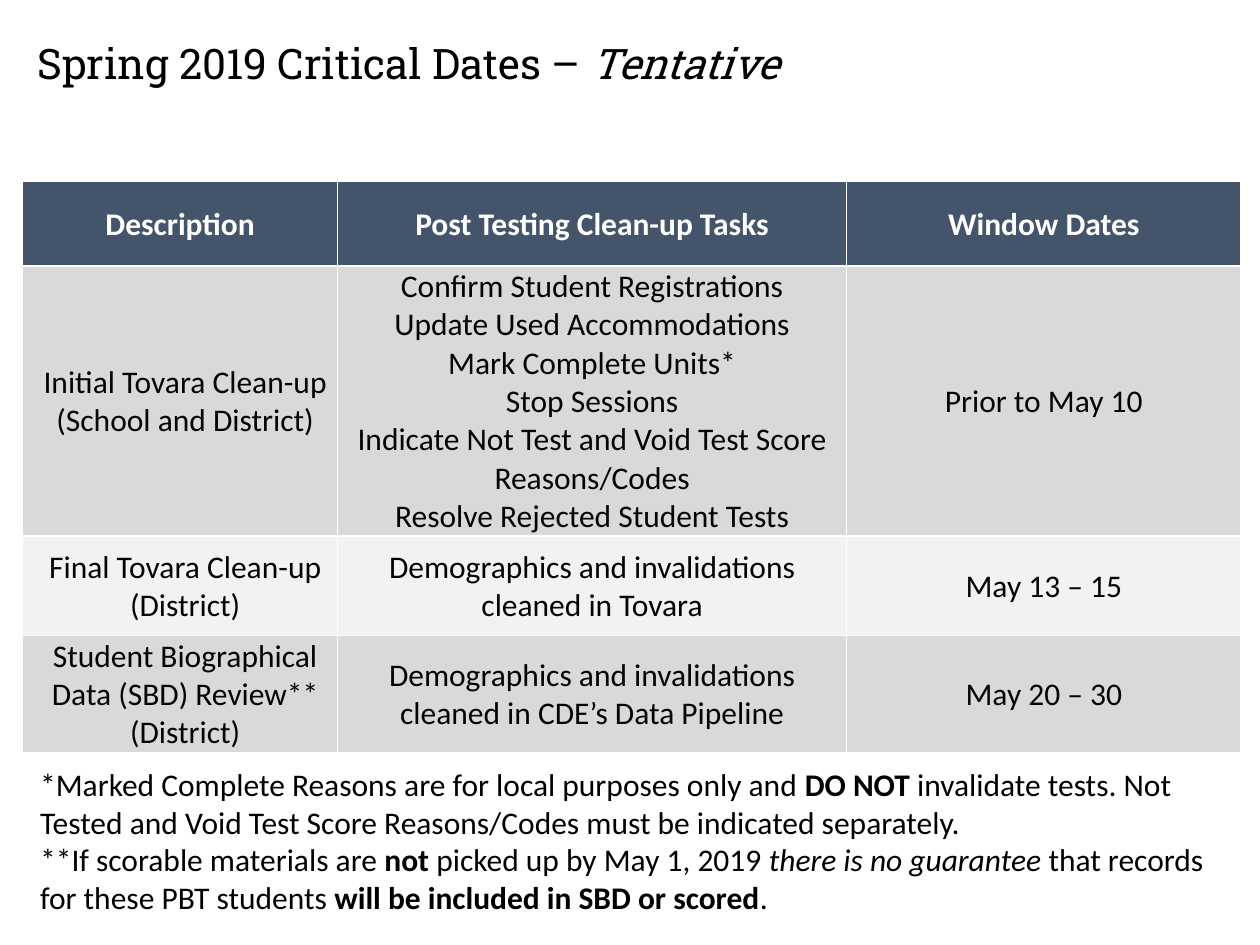
"""Build the Spring 2019 critical dates slide."""
from dataclasses import dataclass
from typing import NamedTuple

from lxml.etree import SubElement
from pptx import Presentation
from pptx.dml.color import RGBColor
from pptx.enum.text import MSO_ANCHOR, MSO_AUTO_SIZE, PP_ALIGN
from pptx.oxml.ns import qn
from pptx.util import Inches, Pt


@dataclass(frozen=True)
class Theme:
    heading_font: str = "Roboto Slab"
    body_font: str = "Calibri"
    heading_size: int = 24
    body_size: int = 18
    black: str = "000000"
    cell_text: str = "040404"
    white: str = "FFFFFF"
    header_fill: str = "44546A"
    band_fills: tuple[str, str] = ("D9D9D9", "F2F2F2")
    border_width: int = 1


class Span(NamedTuple):
    text: str
    bold: bool = False
    italic: bool = False


@dataclass(frozen=True)
class TableRow:
    description: str
    tasks: tuple[str, ...]
    window: str
    height: float = 0.79

    def columns(self) -> list[tuple[str, ...]]:
        return [(self.description,), self.tasks, (self.window,)]


THEME = Theme()
COLUMN_WIDTHS = (2.5, 4.04, 3.13)
TITLE = [Span("Spring 2019 Critical Dates – "), Span("Tentative", italic=True)]
ROWS = [
    TableRow("Description", ("Post Testing Clean-up Tasks",), "Window Dates", 0.67),
    TableRow(
        "Initial Tovara Clean-up (School and District)",
        (
            "Confirm Student Registrations",
            "Update Used Accommodations",
            "Mark Complete Units*",
            "Stop Sessions",
            "Indicate Not Test and Void Test Score Reasons/Codes",
            "Resolve Rejected Student Tests",
        ),
        "Prior to May 10",
    ),
    TableRow(
        "Final Tovara Clean-up (District)",
        ("Demographics and invalidations cleaned in Tovara",),
        "May 13 – 15",
    ),
    TableRow(
        "Student Biographical Data (SBD) Review** (District)",
        ("Demographics and invalidations cleaned in CDE’s Data Pipeline",),
        "May 20 – 30",
    ),
]
FOOTNOTES = [
    [
        Span("*Marked Complete Reasons are for local purposes only and "),
        Span("DO NOT ", bold=True),
        Span("invalidate tests. Not Tested and Void Test Score Reasons/Codes must be indicated separately."),
    ],
    [
        Span("**If scorable materials are "),
        Span("not", bold=True),
        Span(" picked up by May 1, 2019 "),
        Span("there is no guarantee ", italic=True),
        Span("that records for these PBT students "),
        Span("will be included in SBD or scored", bold=True),
        Span("."),
    ],
]


def set_values(target, values: dict) -> None:
    for name, value in values.items():
        setattr(target, name, value)


def write_paragraphs(text_frame, paragraphs, font_name: str, size: int, color: str, alignment) -> None:
    for index, spans in enumerate(paragraphs):
        paragraph = text_frame.add_paragraph() if index else text_frame.paragraphs[0]
        paragraph.alignment = alignment
        for span in spans:
            run = paragraph.add_run()
            run.text = span.text
            set_values(run.font, {
                "name": font_name, "size": Pt(size), "bold": span.bold, "italic": span.italic,
            })
            run.font.color.rgb = RGBColor.from_string(color)


def add_borders(cell) -> None:
    properties = cell._tc.get_or_add_tcPr()
    for index, side in enumerate(("lnL", "lnR", "lnT", "lnB")):
        line = properties.makeelement(qn(f"a:{side}"), {"w": str(Pt(THEME.border_width))})
        fill = SubElement(line, qn("a:solidFill"))
        SubElement(fill, qn("a:srgbClr"), val=THEME.white)
        properties.insert(index, line)


def format_title(title) -> None:
    set_values(title, {
        "left": Inches(0.3), "top": Inches(0.3), "width": Inches(8.62), "height": Inches(0.78),
    })
    set_values(title.text_frame, {
        "margin_left": 0, "margin_top": 0, "margin_right": 0, "margin_bottom": 0,
        "vertical_anchor": MSO_ANCHOR.TOP, "auto_size": MSO_AUTO_SIZE.NONE, "word_wrap": True,
    })
    write_paragraphs(
        title.text_frame, [TITLE], THEME.heading_font, THEME.heading_size, THEME.black, PP_ALIGN.LEFT
    )


def add_dates_table(slide) -> None:
    table = slide.shapes.add_table(
        len(ROWS), len(COLUMN_WIDTHS), Inches(0.18), Inches(1.44),
        Inches(sum(COLUMN_WIDTHS)), Inches(sum(row.height for row in ROWS)),
    ).table
    for column, width in zip(table.columns, COLUMN_WIDTHS):
        column.width = Inches(width)
    for row_index, row in enumerate(ROWS):
        table.rows[row_index].height = Inches(row.height)
        is_header = row_index == 0
        fill = THEME.header_fill if is_header else THEME.band_fills[(row_index - 1) % 2]
        color = THEME.white if is_header else THEME.cell_text
        for column_index, lines in enumerate(row.columns()):
            cell = table.cell(row_index, column_index)
            indented = column_index == 0 and not is_header
            set_values(cell, {
                "margin_left": Inches(0.09 if indented else 0.01), "margin_top": Inches(0.01),
                "margin_right": Inches(0.01), "margin_bottom": 0,
                "vertical_anchor": MSO_ANCHOR.MIDDLE,
            })
            cell.fill.solid()
            cell.fill.fore_color.rgb = RGBColor.from_string(fill)
            add_borders(cell)
            paragraphs = [[Span(line, bold=is_header)] for line in lines]
            write_paragraphs(
                cell.text_frame, paragraphs, THEME.body_font, THEME.body_size, color, PP_ALIGN.CENTER
            )


def add_footnotes(slide) -> None:
    text_box = slide.shapes.add_textbox(Inches(0.22), Inches(6.02), Inches(9.58), Inches(1.31))
    set_values(text_box.text_frame, {"word_wrap": True, "auto_size": MSO_AUTO_SIZE.SHAPE_TO_FIT_TEXT})
    write_paragraphs(
        text_box.text_frame, FOOTNOTES, THEME.body_font, THEME.body_size, THEME.black, PP_ALIGN.LEFT
    )


def main() -> None:
    presentation = Presentation()
    set_values(presentation, {"slide_width": Inches(10), "slide_height": Inches(7.5)})
    slide = presentation.slides.add_slide(presentation.slide_layouts.get_by_name("Title Only"))
    format_title(slide.shapes.title)
    add_dates_table(slide)
    add_footnotes(slide)
    presentation.save("out.pptx")


if __name__ == "__main__":
    main()
